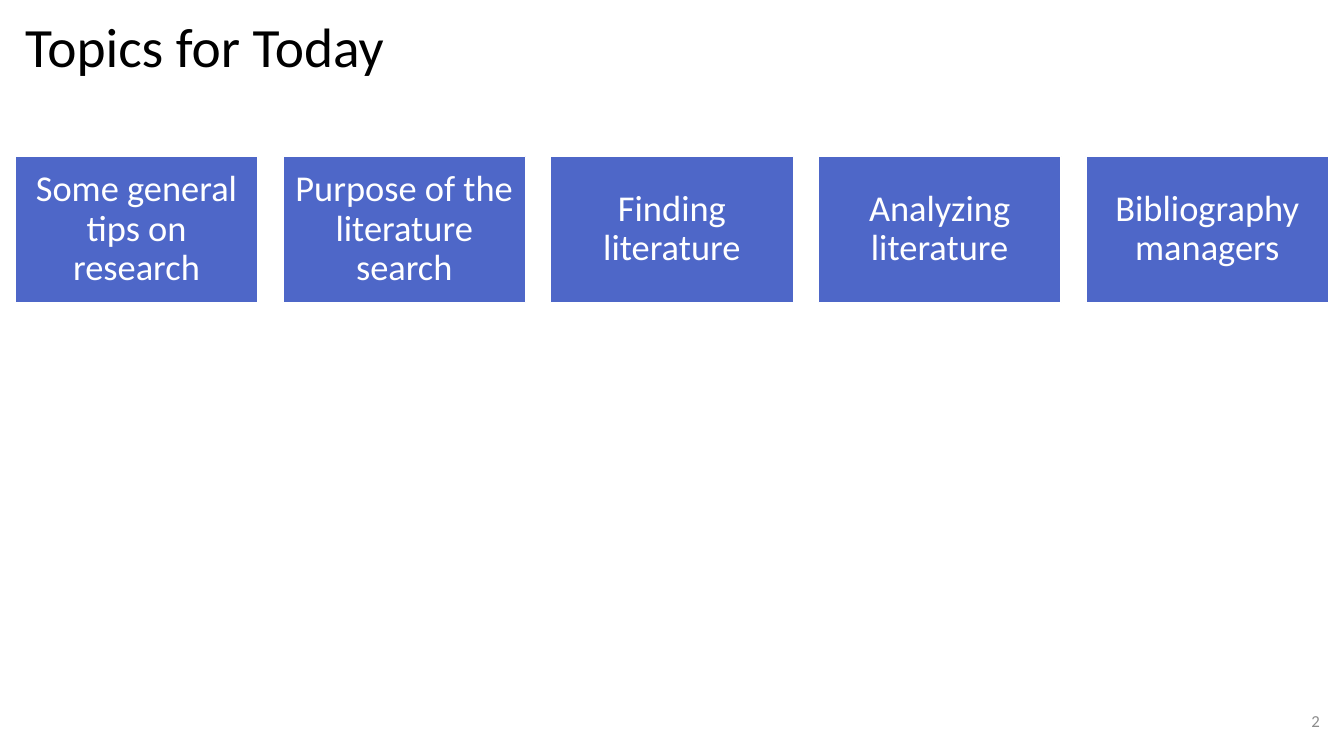
from pptx import Presentation
from pptx.dml.color import RGBColor
from pptx.enum.shapes import MSO_SHAPE
from pptx.enum.text import MSO_ANCHOR, MSO_AUTO_SIZE, PP_ALIGN
from pptx.util import Emu, Pt

PX = 9144  # 100 px to the inch
TOPICS = [
    "Some general tips on research",
    "Purpose of the literature search",
    "Finding literature",
    "Analyzing literature",
    "Bibliography managers",
]
TITLE_STYLE = {"size": Pt(39.6), "color": "000000", "align": PP_ALIGN.LEFT, "spacing": 0.9}
CARD_STYLE = {"size": Pt(26), "color": "FFFFFF", "align": PP_ALIGN.CENTER, "spacing": 0.9}
NUMBER_STYLE = {"size": Pt(12), "color": "8C8C8C", "align": PP_ALIGN.RIGHT, "spacing": 1.0}


def px(length):
    return Emu(round(length * PX))


def rgb(color):
    return RGBColor.from_string(color)


def write(holder, text, style, margins=(10, 5)):
    frame = holder.text_frame
    frame.text = text
    across, down = map(px, margins)
    frame_format = {
        "word_wrap": True,
        "auto_size": MSO_AUTO_SIZE.NONE,
        "vertical_anchor": MSO_ANCHOR.MIDDLE,
        "margin_left": across,
        "margin_right": across,
        "margin_top": down,
        "margin_bottom": down,
    }
    for name, value in frame_format.items():
        setattr(frame, name, value)
    line = frame.paragraphs[0]
    line.alignment = style["align"]
    line.line_spacing = style["spacing"]
    font = line.runs[0].font
    for name, value in {"name": "Calibri", "size": style["size"]}.items():
        setattr(font, name, value)
    font.color.rgb = rgb(style["color"])


def place_title(slide, box):
    title = slide.shapes.title
    for name, value in zip(("left", "top", "width", "height"), box):
        setattr(title, name, px(value))
    write(title, "Topics for Today", TITLE_STYLE)


def place_topics(slide, box, card_width):
    left, top, width, height = box
    step = (width - card_width) / (len(TOPICS) - 1)
    for column, topic in enumerate(TOPICS):
        card_box = (left + column * step, top, card_width, height)
        card = slide.shapes.add_shape(MSO_SHAPE.RECTANGLE, *map(px, card_box))
        card.shadow.inherit = False
        card.fill.solid()
        card.fill.fore_color.rgb = rgb("4E67C8")
        card.line.color.rgb = rgb("FFFFFF")
        card.line.width = Pt(1)
        write(card, topic, CARD_STYLE, margins=(11, 11))


def place_slide_number(slide, box):
    write(slide.shapes.add_textbox(*map(px, box)), "2", NUMBER_STYLE)


def main():
    deck = Presentation()
    deck.slide_width, deck.slide_height = px(1333), px(750)
    slide = deck.slides.add_slide(deck.slide_layouts[5])  # Title Only
    # Heading
    place_title(slide, (15, 12, 1304, 74))
    # Row of topic cards
    place_topics(slide, (15, 155, 1303, 145), card_width=241)
    # Footer
    place_slide_number(slide, (1019, 695, 300, 40))
    deck.save("out.pptx")


if __name__ == "__main__":
    main()
